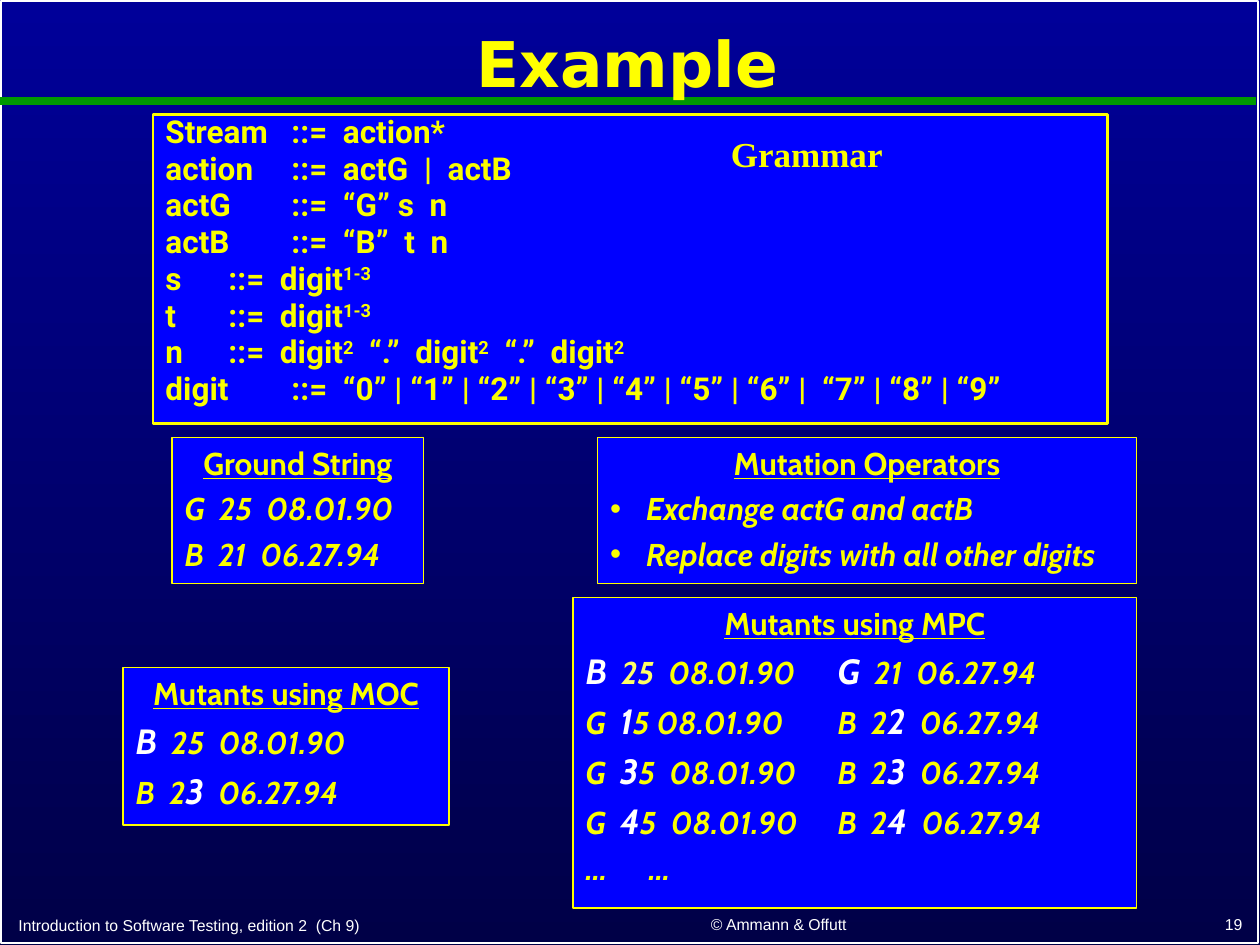
from dataclasses import dataclass
from typing import Optional

from lxml.etree import SubElement
from pptx import Presentation
from pptx.dml.color import RGBColor
from pptx.enum.shapes import MSO_CONNECTOR as Connector, MSO_SHAPE as Shape
from pptx.enum.text import MSO_ANCHOR as Anchor, MSO_AUTO_SIZE as AutoSize, PP_ALIGN as Align
from pptx.oxml.ns import qn
from pptx.util import Pt

WHITE, YELLOW, PALE, LEMON = "FFFFFF", "FFFF00", "FAFD00", "FFFF66"
BLUE, GREEN, NIGHT_TOP, NIGHT_BOTTOM = "0000FF", "009900", "000099", "000047"


@dataclass(frozen=True)
class Span:
    text: str
    size: float = 18
    color: str = PALE
    raised: bool = False


@dataclass(frozen=True)
class Line:
    spans: tuple[Span, ...]
    font: str = "Cabin"
    italic: bool = True
    underline: bool = False
    align: Align = Align.LEFT
    before: float = 4.5
    spacing: float = 1.0
    tab: Optional[float] = None
    bullet: bool = False


@dataclass(frozen=True)
class Area:
    left: float
    top: float
    width: float
    height: float


@dataclass(frozen=True)
class Panel:
    area: Area
    lines: list[Line]
    border: float = 1


@dataclass(frozen=True)
class Footer:
    text: str
    area: Area
    align: Align


def rgb(value: str) -> RGBColor:
    return RGBColor.from_string(value)


def add_span(para, text: str, *, font: str, size: float, color: str, bold: bool = False,
             italic: bool = False, underline: bool = False, raised: bool = False) -> None:
    span = para.add_run()
    span.text = text
    span.font.name, span.font.size = font, Pt(size)
    span.font.bold, span.font.italic, span.font.underline = bold, italic, underline
    span.font.color.rgb = rgb(color)
    if raised:
        span.font._element.set("baseline", "30000")


def place(item, area: Area) -> None:
    item.left, item.top = Pt(area.left), Pt(area.top)
    item.width, item.height = Pt(area.width), Pt(area.height)


def add_text_box(page, area: Area, anchor: Anchor = Anchor.TOP):
    box = page.shapes.add_textbox(Pt(area.left), Pt(area.top), Pt(area.width), Pt(area.height))
    box.text_frame.word_wrap = True
    box.text_frame.vertical_anchor = anchor
    return box


def add_rectangle(page, area: Area):
    box = page.shapes.add_shape(
        Shape.RECTANGLE, Pt(area.left), Pt(area.top), Pt(area.width), Pt(area.height))
    box.shadow.inherit = False
    return box


def write_line(para, line: Line) -> None:
    para.alignment, para.line_spacing = line.align, line.spacing
    para.space_before = Pt(line.before)
    props = para._p.get_or_add_pPr()
    indent = Pt(20.5) if line.bullet else 0
    props.set("marL", str(indent))
    props.set("indent", str(-indent))
    if line.bullet:
        SubElement(props, qn("a:buChar"), char="•")
    else:
        SubElement(props, qn("a:buNone"))
    if line.tab is not None:
        stops = SubElement(props, qn("a:tabLst"))
        SubElement(stops, qn("a:tab"), pos=str(Pt(line.tab)), algn="l")
    for part in line.spans:
        add_span(para, part.text, font=line.font, size=part.size, color=part.color, bold=True,
                 italic=line.italic, underline=line.underline, raised=part.raised)


def fill_panel(box, panel: Panel) -> None:
    place(box, panel.area)
    box.fill.solid()
    box.fill.fore_color.rgb = rgb(BLUE)
    box.line.color.rgb = rgb(YELLOW)
    box.line.width = Pt(panel.border)
    frame = box.text_frame
    frame.word_wrap, frame.auto_size = True, AutoSize.NONE
    frame.vertical_anchor = Anchor.TOP
    for index, line in enumerate(panel.lines):
        write_line(frame.add_paragraph() if index else frame.paragraphs[0], line)


def heading(text: str) -> Line:
    return Line((Span(text),), italic=False, underline=True, align=Align.CENTER)


def plain(text: str, **layout) -> Line:
    return Line((Span(text),), **layout)


def changed(text: str) -> Span:
    return Span(text, size=20, color=WHITE)


def digit_mutants(first: str, rest: str, second: str) -> Line:
    return Line((Span("G  "), changed(first), Span(rest + "\t"), Span("B  ", color=YELLOW),
                 Span("2"), changed(second), Span("  06.27.94")), tab=141)


def rule(name: str, *parts: str) -> Line:
    spans = [Span(f"{name}\t::=  {parts[0]}")]
    spans += [Span(part, raised=index % 2 == 0) for index, part in enumerate(parts[1:])]
    return Line(tuple(spans), font="Roboto", italic=False, before=4.75, spacing=0.75, tab=65)


GROUND = Panel(Area(98.5, 250, 143.5, 83.5), [
    heading("Ground String"), plain("G  25  08.01.90"), plain("B  21  06.27.94")])
OPERATORS = Panel(Area(341.5, 250, 308, 83.5), [
    heading("Mutation Operators"),
    plain("Exchange actG and actB", bullet=True),
    plain("Replace digits with all other digits", bullet=True)])
MOC = Panel(Area(70.5, 381.5, 186, 90), [
    heading("Mutants using MOC"),
    Line((changed("B"), Span("  25  08.01.90"))),
    Line((Span("B  2"), changed("3"), Span("  06.27.94")))])
MPC = Panel(Area(327.5, 341.5, 322, 177.5), [
    heading("Mutants using MPC"),
    Line((changed("B"), Span("  "), Span("25  ", color=LEMON), Span("08.01.90\t"),
          changed("G"), Span("  21  06.27.94")), tab=141),
    digit_mutants("1", "5 08.01.90", "2"),
    digit_mutants("3", "5  08.01.90", "3"),
    digit_mutants("4", "5  08.01.90", "4"),
    plain("…\t…", tab=114)])
GRAMMAR = Panel(Area(87.5, 65.5, 545.5, 176.5), [
    rule("Stream", "action*"),
    rule("action", "actG  |  actB"),
    rule("actG", "“G” s  n"),
    rule("actB", "“B”  t  n"),
    rule("s", "digit", "1-3"),
    rule("t", "digit", "1-3"),
    rule("n", "digit", "2", "  “.”  digit", "2", "  “.”  digit", "2"),
    rule("digit", "“0” | “1” | “2” | “3” | “4” | “5” | “6” |  “7” | “8” | “9”")], border=1.5)
FOOTERS = [
    Footer("Introduction to Software Testing, edition 2  (Ch 9)",
           Area(3.5, 517.5, 313, 20), Align.LEFT),
    Footer("© Ammann & Offutt", Area(331, 517, 228, 20), Align.CENTER),
    Footer("19", Area(567.5, 516.5, 149.5, 20.5), Align.RIGHT)]


def draw_backdrop(page) -> None:
    fill = page.background.fill
    fill.gradient()
    fill.gradient_angle = 270
    for stop, color in zip(fill.gradient_stops, (NIGHT_TOP, NIGHT_BOTTOM)):
        stop.color.rgb = rgb(color)
    border = add_rectangle(page, Area(0.75, 0.75, 718, 538))
    border.fill.background()
    border.line.color.rgb = rgb(WHITE)
    border.line.width = Pt(1)
    divider = page.shapes.add_connector(Connector.STRAIGHT, 0, Pt(57.5), Pt(718), Pt(57.5))
    divider.line.color.rgb = rgb(GREEN)
    divider.line.width = Pt(4.5)
    SubElement(divider._element.spPr, qn("a:effectLst"))


def draw_title(page) -> None:
    title = page.shapes.title
    place(title, Area(0.75, 8, 715.5, 60.5))
    title.text_frame.vertical_anchor = Anchor.MIDDLE
    para = title.text_frame.paragraphs[0]
    para.alignment, para.line_spacing = Align.CENTER, 0.9
    add_span(para, "Example", font="DejaVu Sans", size=36, color=YELLOW, bold=True)
    page.shapes._spTree.append(title._element)


def main() -> None:
    deck = Presentation()
    deck.slide_width, deck.slide_height = Pt(720), Pt(540)
    page = deck.slides.add_slide(deck.slide_layouts[1])
    draw_backdrop(page)
    for footer in FOOTERS:
        para = add_text_box(page, footer.area, Anchor.BOTTOM).text_frame.paragraphs[0]
        para.alignment = footer.align
        add_span(para, footer.text, font="Arial", size=9, color=WHITE)
    draw_title(page)
    fill_panel(page.placeholders[1], OPERATORS)
    for panel in (GROUND, MOC, MPC, GRAMMAR):
        fill_panel(add_rectangle(page, panel.area), panel)
    label = add_text_box(page, Area(410.5, 72, 109, 31))
    write_line(label.text_frame.paragraphs[0],
               Line((Span("Grammar", size=20),), font="Times New Roman", italic=False, before=10))
    deck.save("out.pptx")


if __name__ == "__main__":
    main()
